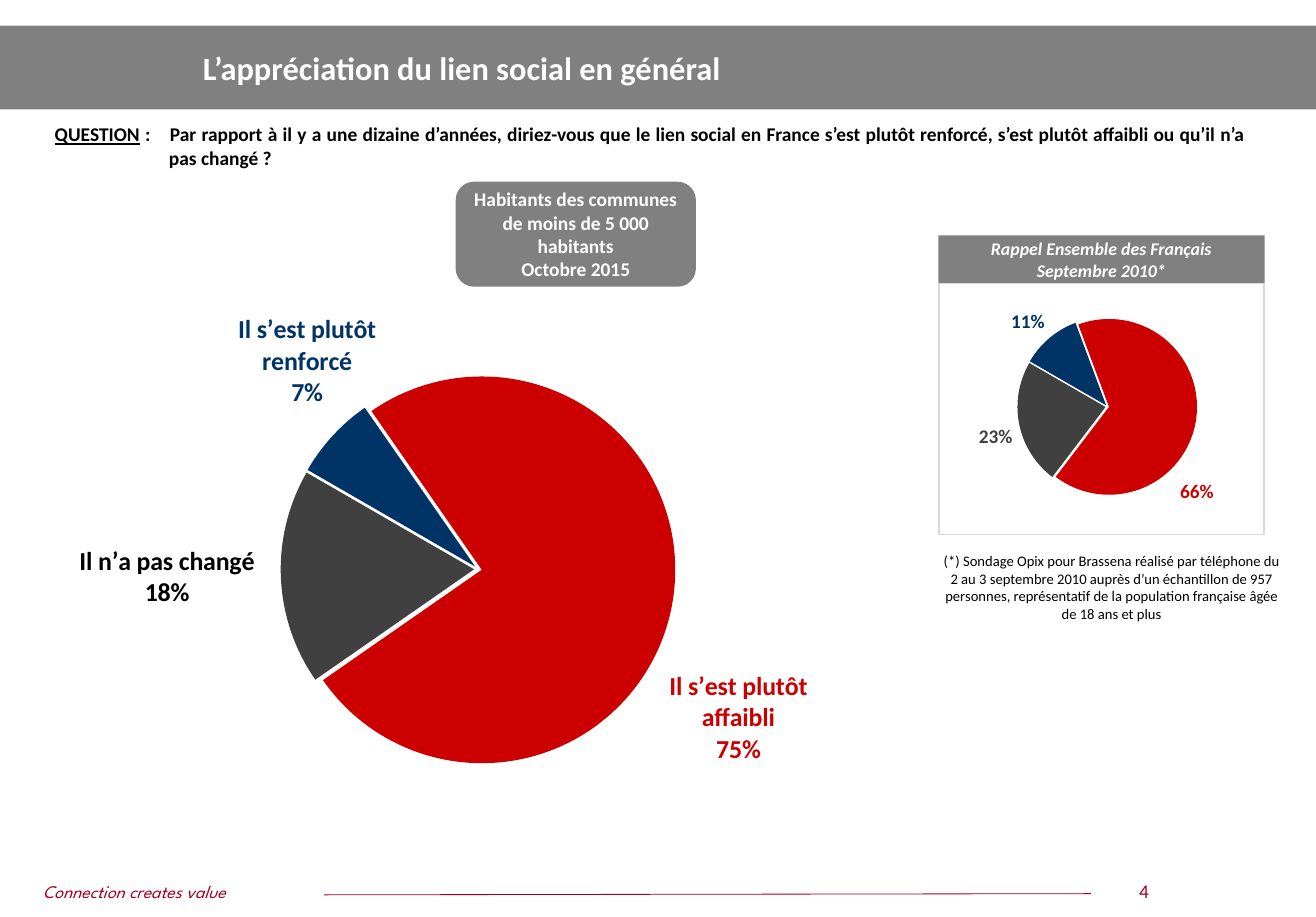
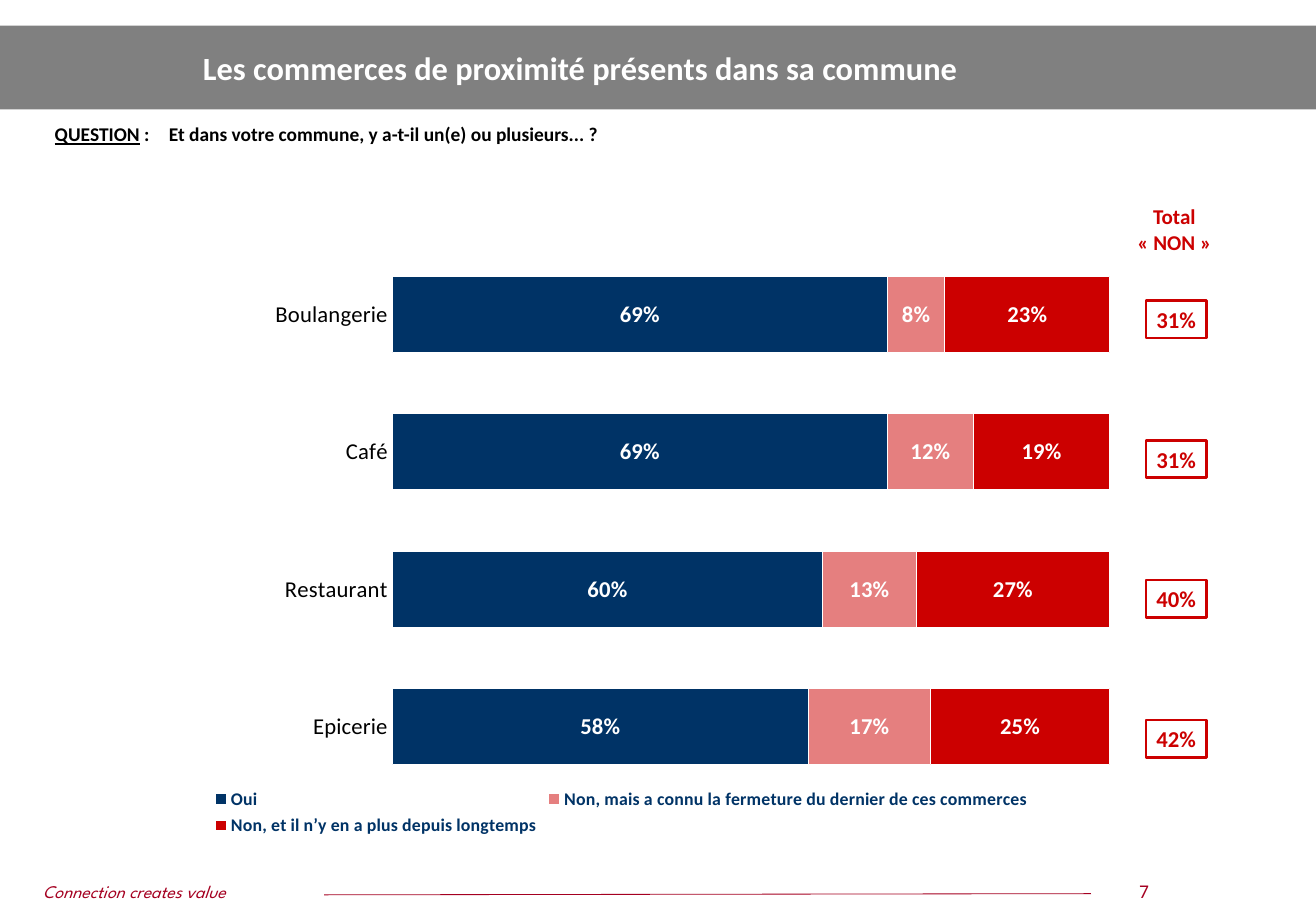
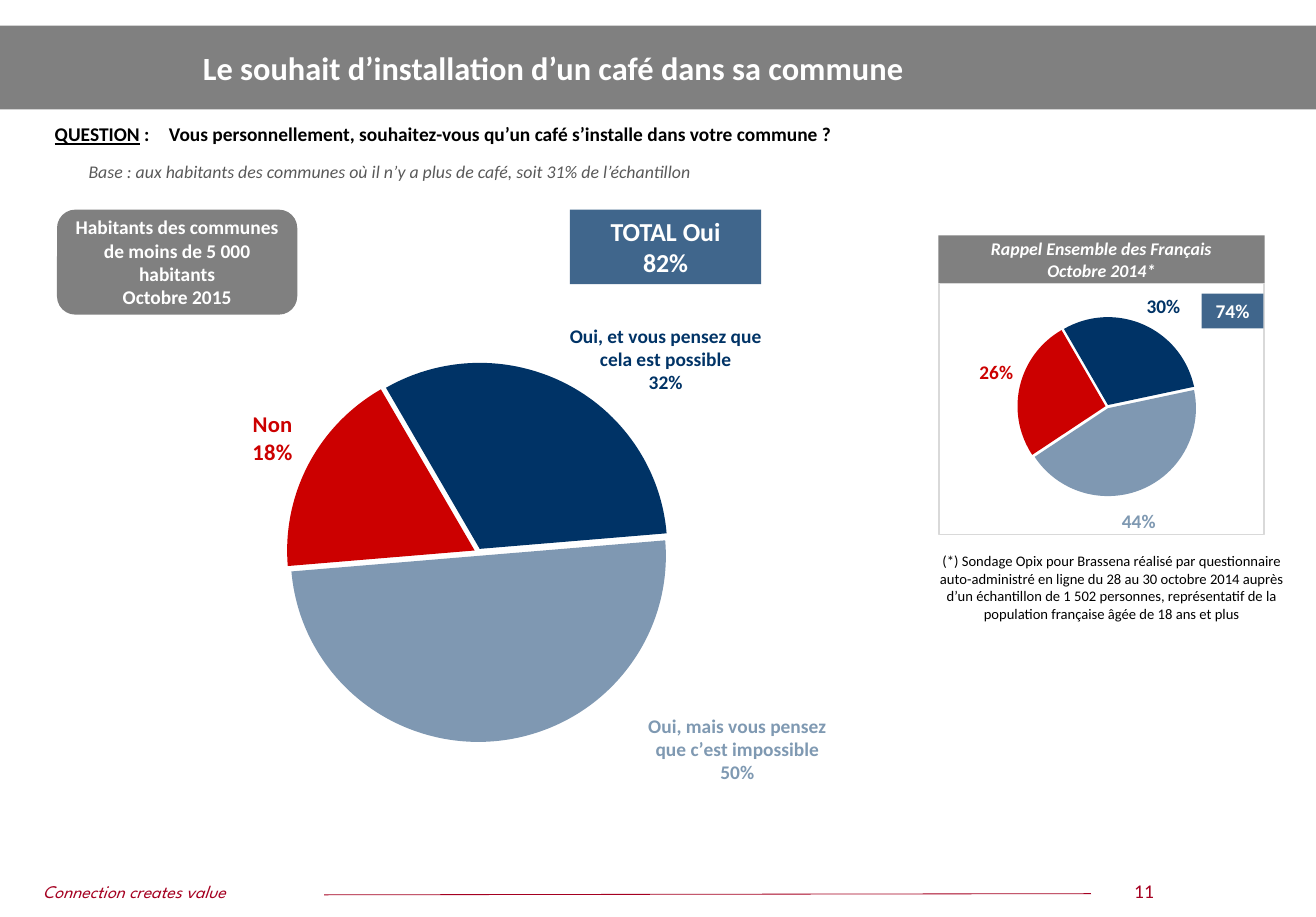
from lxml.etree import SubElement
from pptx import Presentation
from pptx.chart.data import CategoryChartData
from pptx.dml.color import RGBColor
from pptx.enum.chart import XL_CHART_TYPE, XL_LABEL_POSITION, XL_LEGEND_POSITION, XL_TICK_MARK
from pptx.enum.shapes import MSO_CONNECTOR, MSO_SHAPE
from pptx.enum.text import MSO_ANCHOR, PP_ALIGN
from pptx.oxml import parse_xml
from pptx.oxml.ns import nsdecls, qn
from pptx.util import Inches, Pt

COLORS = {
    "white": "FFFFFF", "black": "000000", "gray": "808080", "dark": "404040",
    "soft": "595959", "edge": "D9D9D9", "blue": "003366", "steel": "40668C",
    "pale": "7F99B2", "red": "CC0000", "wine": "A50021",
}
FONT = "Calibri"
MARGINS = (0.1, 0.05, 0.1, 0.05)
LEFT, CENTER, JUSTIFY = PP_ALIGN.LEFT, PP_ALIGN.CENTER, PP_ALIGN.JUSTIFY


def rgb(name):
    return RGBColor.from_string(COLORS[name])


def style(font, size, color, bold=False, italic=False, face=FONT):
    font.name, font.size, font.bold, font.italic = face, Pt(size), bold, italic
    font.color.rgb = rgb(color)


def paint(fill, color, alpha=100):
    fill.solid()
    fill.fore_color.rgb = rgb(color)
    if alpha < 100:
        tint = next(fill._xPr.iter(qn("a:srgbClr")))
        SubElement(tint, qn("a:alpha")).set("val", str(alpha * 1000))


# Text and shapes

def write(shape, lines, size, color, align=CENTER, anchor=MSO_ANCHOR.MIDDLE,
          insets=MARGINS, **look):
    frame = shape.text_frame
    frame.word_wrap = True
    frame.vertical_anchor = anchor
    (frame.margin_left, frame.margin_top,
     frame.margin_right, frame.margin_bottom) = map(Inches, insets)
    for i, line in enumerate(lines):
        para = frame.add_paragraph() if i else frame.paragraphs[0]
        para.alignment = align
        run = para.add_run()
        run.text = line
        style(run.font, size, color, **look)


def add_text(slide, box, lines, size, color, anchor=MSO_ANCHOR.TOP, **look):
    shape = slide.shapes.add_textbox(*map(Inches, box))
    write(shape, lines, size, color, anchor=anchor, **look)
    return shape


def add_box(slide, box, fill, line=None, kind=MSO_SHAPE.RECTANGLE):
    shape = slide.shapes.add_shape(kind, *map(Inches, box))
    shape.shadow.inherit = False
    paint(shape.fill, fill)
    if line:
        shape.line.color.rgb = rgb(line)
        shape.line.width = Pt(1.5)
    else:
        shape.line.fill.background()
    return shape


# Shared band and footer, kept on the layout

def add_frame(slide, layout):
    for holder in list(layout.placeholders):
        if holder.placeholder_format.idx:
            layout.shapes.element.remove(holder.element)
    band = add_box(slide, (0, 0.22, 11.29, 0.72), "gray")
    motto = add_text(slide, (0.27, 7.51, 2.98, 0.29), ["Connection creates value"],
                     11, "wine", align=LEFT, italic=True, face="League Spartan")
    rule = slide.shapes.add_connector(
        MSO_CONNECTOR.STRAIGHT, *map(Inches, (2.78, 7.68, 9.36, 7.67)))
    rule.line.color.rgb = rgb("wine")
    rule.line.width = Pt(0.5)
    SubElement(rule.element.find(qn("p:spPr")), qn("a:effectLst"))
    for part in (band, motto, rule):
        layout.shapes.element.append(part.element)


def add_slide(deck, title, page, query):
    layout = deck.slide_layouts[5]
    slide = deck.slides.add_slide(layout)
    if len(deck.slides) == 1:
        add_frame(slide, layout)
    head = slide.shapes.title
    head.left, head.top, head.width, head.height = map(Inches, (1.64, 0.22, 9.48, 0.72))
    write(head, [title], 20, "white", align=LEFT, bold=True)
    add_text(slide, (9.52, 7.5, 0.59, 0.3), [page], 12, "wine")
    # Question with a hanging indent
    ask = add_text(slide, (0.38, 1.01, 10.67, 0.48), ["QUESTION"], 12, "black",
                   align=JUSTIFY, insets=(0.09, 0.04, 0.36, 0.04), bold=True)
    para = ask.text_frame.paragraphs[0]
    props = para._p.get_or_add_pPr()
    props.set("marL", str(Inches(0.98)))
    props.set("indent", str(-Inches(0.98)))
    para.runs[0].font.underline = True
    run = para.add_run()
    run.text = " :\t" + query
    style(run.font, 12, "black", bold=True)
    return slide


# Charts

def add_layout(node, place, inner=False):
    xml = "".join(f'<c:{key} val="{val}"/>' for key, val in zip("xywh", place))
    modes = '<c:xMode val="edge"/><c:yMode val="edge"/>' if inner else ""
    target = '<c:layoutTarget val="inner"/>' if inner else ""
    node.append(parse_xml(f'<c:layout {nsdecls("c")}><c:manualLayout>{target}{modes}'
                          f'{xml}</c:manualLayout></c:layout>'))
    return node[-1]


def add_chart(slide, kind, box, names, series, plot):
    data = CategoryChartData(number_format="0%")
    data.categories = names
    for name, vals in series:
        data.add_series(name, vals)
    chart = slide.shapes.add_chart(kind, *map(Inches, box), data).chart
    chart.has_title = False
    chart.has_legend = False
    style(chart.font, 18, "black")
    area = next(chart.element.iter(qn("c:plotArea")))
    for old in area.findall(qn("c:layout")):
        area.remove(old)
    area.insert(0, add_layout(area, plot, inner=True))
    return chart


def add_pie(slide, box, slices, start, plot, named=False, border=False):
    """Each slice: name, value, fill, alpha, label colour, label size, label shift."""
    chart = add_chart(slide, XL_CHART_TYPE.PIE, box, [s[0] for s in slices],
                      [("Series 1", [s[1] for s in slices])], plot)
    pie = chart.plots[0]
    pie.vary_by_categories = True
    for i, (_, _, color, alpha, ink, size, _) in enumerate(slices):
        point = pie.series[0].points[i]
        paint(point.format.fill, color, alpha)
        label = point.data_label
        style(label.font, size, ink, bold=True)
        label.position = XL_LABEL_POSITION.OUTSIDE_END
    # Label content and shift
    root = chart.element
    for tag, piece in zip(root.iter(qn("c:dLbl")), slices):
        tag.find(qn("c:showVal")).set("val", "1")
        tag.find(qn("c:showPercent")).set("val", "0")
        if named:
            tag.find(qn("c:showCatName")).set("val", "1")
            SubElement(tag, qn("c:separator")).text = "\n"
        if piece[-1]:
            tag.find(qn("c:idx")).addnext(add_layout(tag, piece[-1]))
    for tag in root.iter(qn("c:showLeaderLines")):
        tag.set("val", "0")
    # Slice gap and start angle
    group = next(root.iter(qn("c:pieChart")))
    gap = parse_xml(f'<c:explosion {nsdecls("c")} val="2"/>')
    group.find(qn("c:ser")).find(qn("c:tx")).addnext(gap)
    SubElement(group, qn("c:firstSliceAng")).set("val", str(start))
    if border:
        root.find(qn("c:chart")).addnext(parse_xml(
            f'<c:spPr {nsdecls("c", "a")}><a:noFill/><a:ln w="9525"><a:solidFill>'
            f'<a:srgbClr val="{COLORS["edge"]}"/></a:solidFill></a:ln></c:spPr>'))


def add_bars(slide, names, series, tints):
    chart = add_chart(slide, XL_CHART_TYPE.BAR_STACKED, (0.84, 2.11, 8.99, 5.11),
                      names, series, (0.281, 0, 0.719, 0.923))
    bars = chart.plots[0]
    bars.gap_width, bars.overlap = 80, 100
    bars.vary_by_categories = False
    for item, tint in zip(bars.series, tints):
        paint(item.format.fill, *tint)
        item.format.line.color.rgb = rgb("white")
        item.format.line.width = Pt(0.75)
        labels = item.data_labels
        labels.show_value = True
        labels.number_format, labels.number_format_is_linked = "0%", False
        labels.position = XL_LABEL_POSITION.CENTER
        style(labels.font, 14, "white", bold=True)
    axis = chart.category_axis
    axis.reverse_order = True
    axis.major_tick_mark = XL_TICK_MARK.NONE
    axis.format.line.fill.background()
    style(axis.tick_labels.font, 14, "black")
    scale = chart.value_axis
    scale.minimum_scale, scale.maximum_scale = 0, 1.05
    scale.has_major_gridlines = False
    scale.visible = False
    chart.has_legend = True
    chart.legend.position = XL_LEGEND_POSITION.BOTTOM
    chart.legend.include_in_layout = False
    style(chart.legend.font, 11, "blue", bold=True)


# Blocks of the pie slides

def add_main(slide, slices, start, plot):
    add_pie(slide, (-0.13, 2.32, 8.33, 4.69), slices, start, plot, named=True)


def add_recall(slide, date, slices, start, note):
    head = add_box(slide, (8.05, 2.02, 2.8, 0.41), "gray")
    write(head, ["Rappel Ensemble des Français", date], 11, "white",
          bold=True, italic=True)
    add_pie(slide, (8.05, 2.43, 2.8, 2.16), slices, start,
            (0.241, 0.133, 0.554, 0.716), border=True)
    add_text(slide, (7.96, 4.69, 3.15, 0.71), [note], 9, "black")


def add_group(slide, left, top):
    tag = add_box(slide, (left, top, 2.04, 0.88), "gray", "gray",
                  MSO_SHAPE.ROUNDED_RECTANGLE)
    write(tag, ["Habitants des communes de moins de 5 000 habitants", "Octobre 2015"],
          12, "white", insets=(0.04, 0.05, 0.04, 0.05), bold=True)


# Slides

def show_bond(deck):
    slide = add_slide(
        deck, "L’appréciation du lien social en général", "4",
        "Par rapport à il y a une dizaine d’années, diriez-vous que le lien social en "
        "France s’est plutôt renforcé, s’est plutôt affaibli ou qu’il n’a pas changé ?")
    add_main(slide, [
        ("Il s’est plutôt renforcé", 0.07, "blue", 100, "blue", 16, (0.05, -0.04)),
        ("Il s’est plutôt affaibli", 0.75, "red", 100, "red", 16, (-0.01, 0.12)),
        ("Il n’a pas changé", 0.18, "dark", 100, "black", 16, (-0.02, 0)),
    ], 300, (0.27, 0.186, 0.476, 0.722))
    add_recall(slide, "Septembre 2010*", [
        ("1", 0.11, "blue", 100, "blue", 12, None),
        ("2", 0.66, "red", 100, "red", 12, (-0.07, 0.24)),
        ("3", 0.23, "dark", 100, "dark", 12, None),
    ], 300, "(*) Sondage Opix pour Brassena réalisé par téléphone du 2 au 3 septembre 2010 "
            "auprès d’un échantillon de 957 personnes, représentatif de la population "
            "française âgée de 18 ans et plus")
    add_group(slide, 3.92, 1.57)


def show_shops(deck):
    slide = add_slide(deck, "Les commerces de proximité présents dans sa commune", "7",
                      "Et dans votre commune, y a-t-il un(e) ou plusieurs... ?")
    add_bars(slide, ["Boulangerie", "Café", "Restaurant", "Epicerie"], [
        ("Oui", (0.69, 0.69, 0.6, 0.58)),
        ("Non, mais a connu la fermeture du dernier de ces commerces",
         (0.08, 0.12, 0.13, 0.17)),
        ("Non, et il n’y en a plus depuis longtemps", (0.23, 0.19, 0.27, 0.25)),
    ], [("blue",), ("red", 50), ("red",)])
    add_text(slide, (9.47, 1.7, 1.21, 0.54), ["Total", "« NON »"], 13, "red", bold=True)
    for i, total in enumerate(["31%", "31%", "40%", "42%"]):
        cell = add_box(slide, (9.83, 2.58 + 1.2 * i, 0.52, 0.32), "white", "red")
        write(cell, [total], 14, "red", insets=(0, 0.04, 0, 0.04), bold=True)


def show_wish(deck):
    slide = add_slide(
        deck, "Le souhait d’installation d’un café dans sa commune", "11",
        "Vous personnellement, souhaitez-vous qu’un café s’installe dans votre commune ?")
    add_main(slide, [
        ("Oui, et vous pensez que cela est possible", 0.32,
         "blue", 100, "blue", 12, (0, 0.03)),
        ("Oui, mais vous pensez que c’est impossible", 0.5,
         "blue", 50, "pale", 12, (0.25, -0.06)),
        ("Non", 0.18, "red", 100, "red", 14, (-0.01, 0.01)),
    ], 330, (0.27, 0.17, 0.476, 0.7))
    add_recall(slide, "Octobre 2014*", [
        ("1", 0.3, "blue", 100, "blue", 12, None),
        ("2", 0.44, "blue", 50, "pale", 12, (-0.07, 0.06)),
        ("3", 0.26, "red", 100, "red", 12, None),
    ], 330, "(*) Sondage Opix pour Brassena réalisé par questionnaire auto-administré en "
            "ligne du 28 au 30 octobre 2014 auprès d’un échantillon de 1 502 personnes, "
            "représentatif de la population française âgée de 18 ans et plus")
    add_group(slide, 0.5, 1.81)
    add_text(slide, (0.76, 1.38, 8.68, 0.19),
             ["Base : aux habitants des communes où il n’y a plus de café, "
              "soit 31% de l’échantillon"],
             11, "soft", align=LEFT, insets=(0, 0, 0, 0), italic=True)
    total = add_box(slide, (4.89, 1.8, 1.64, 0.64), "steel")
    write(total, ["TOTAL Oui", "82%"], 16, "white", bold=True)
    past = add_box(slide, (10.31, 2.52, 0.53, 0.3), "steel")
    write(past, ["74%"], 12, "white", bold=True)


def main():
    deck = Presentation()
    deck.slide_width, deck.slide_height = Inches(11.29), Inches(7.87)
    show_bond(deck)
    show_shops(deck)
    show_wish(deck)
    deck.save("out.pptx")


if __name__ == "__main__":
    main()
